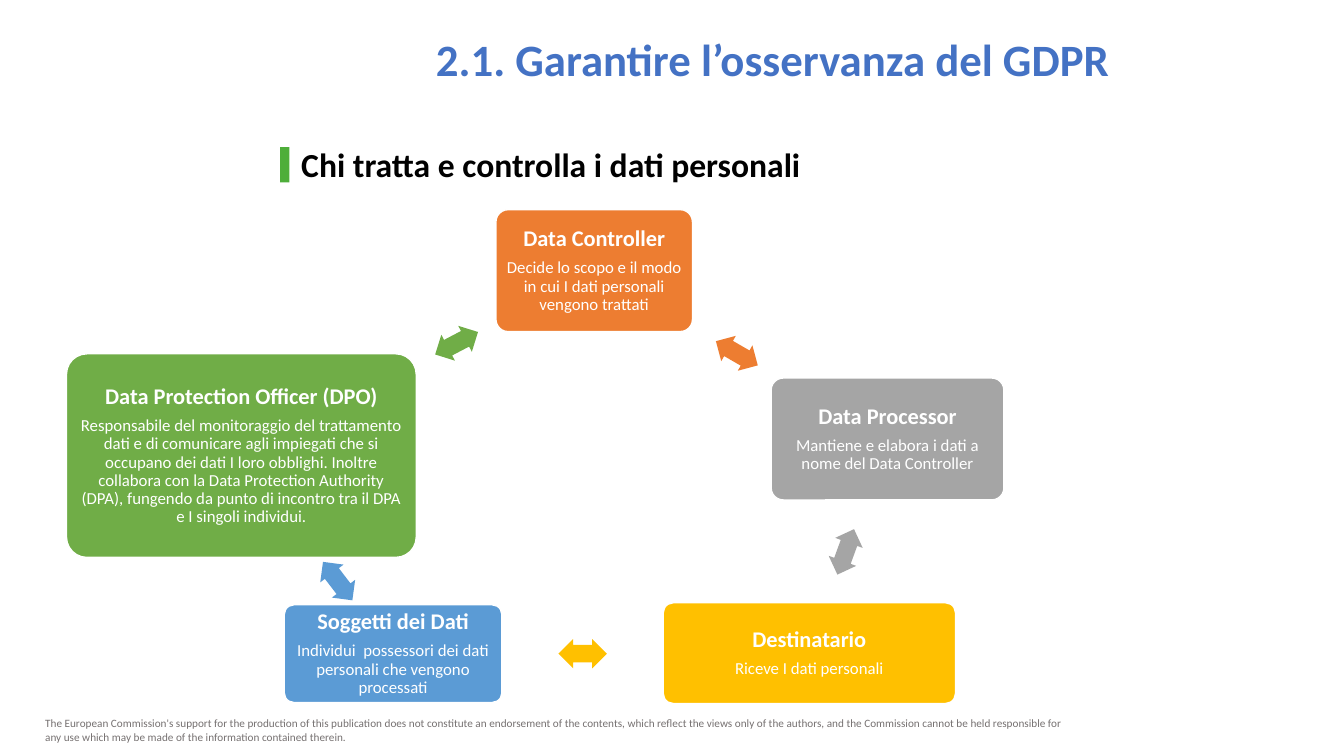
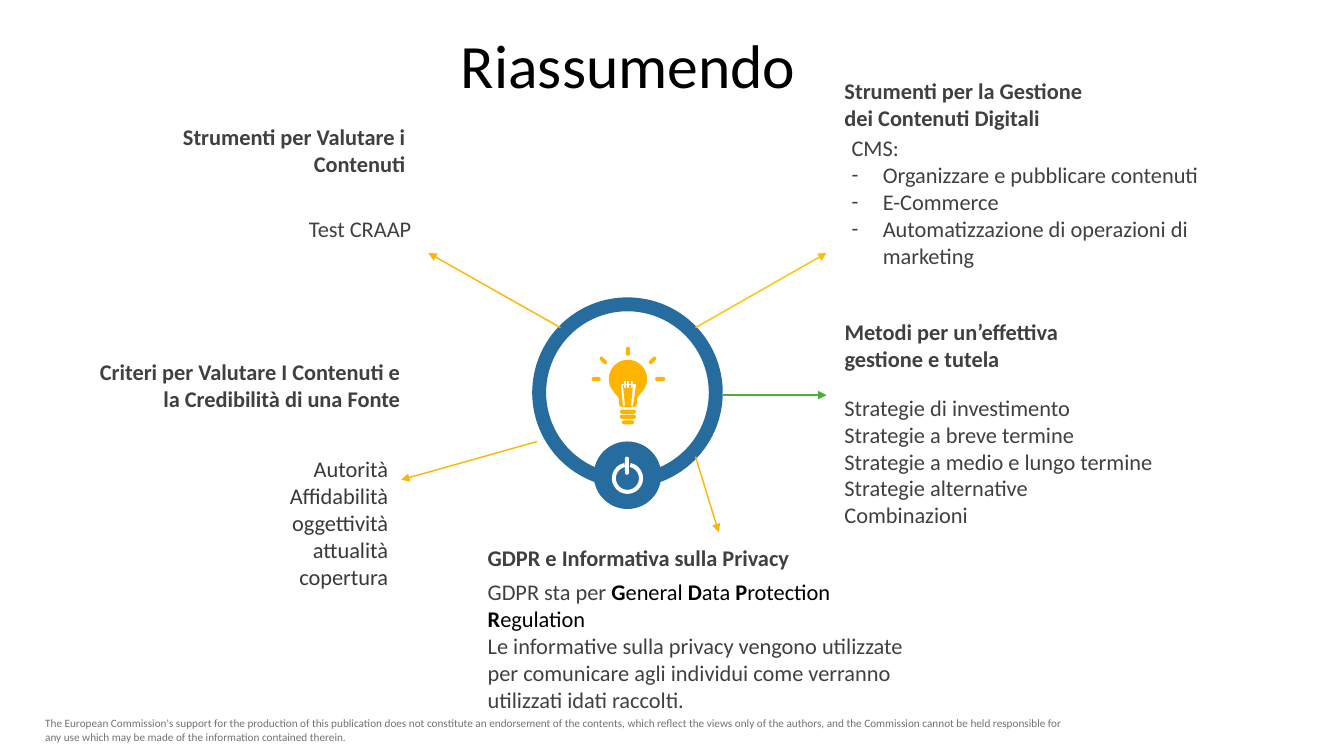
"""Build two Italian training slides: GDPR roles and a closing summary."""
from dataclasses import dataclass
from math import cos, radians, sin

from lxml import etree
from pptx import Presentation
from pptx.dml.color import RGBColor
from pptx.enum.shapes import MSO_CONNECTOR, MSO_SHAPE
from pptx.enum.text import MSO_ANCHOR, MSO_AUTO_SIZE, PP_ALIGN
from pptx.oxml.ns import qn
from pptx.util import Pt

PX = 9144
LEFT, CENTER, RIGHT = PP_ALIGN.LEFT, PP_ALIGN.CENTER, PP_ALIGN.RIGHT
TOP, MIDDLE = MSO_ANCHOR.TOP, MSO_ANCHOR.MIDDLE
RECTANGLE, ROUNDED = MSO_SHAPE.RECTANGLE, MSO_SHAPE.ROUNDED_RECTANGLE
ELLIPSE, DONUT, BLOCK_ARC = MSO_SHAPE.OVAL, MSO_SHAPE.DONUT, MSO_SHAPE.BLOCK_ARC
DOUBLE_ARROW = MSO_SHAPE.LEFT_RIGHT_ARROW
STRAIGHT = MSO_CONNECTOR.STRAIGHT


@dataclass(frozen=True)
class Theme:
    """Colours, font and type sizes of the deck."""
    font: str = "Calibri"
    white: str = "FFFFFF"
    black: str = "000000"
    title_blue: str = "4472C4"
    marker_green: str = "4EAE3A"
    ring_blue: str = "266C9F"
    bulb: str = "FFB500"
    orange: str = "ED7D31"
    gray: str = "A5A5A5"
    gold: str = "FFC000"
    sky: str = "5B9BD5"
    green: str = "70AD47"
    text: str = "404040"
    dark_text: str = "3B3838"
    footer: str = "767171"
    summary_title_size: int = 44
    title_size: int = 32
    subtitle_size: int = 24
    text_size: int = 16
    card_size: int = 12
    footer_size: int = 8


THEME = Theme()


def write(shape, lines, size, color, bold=False, align=LEFT, anchor=MIDDLE, spacing=1.0):
    """Fill a shape with paragraphs; a leading dash makes a bullet, a list makes runs."""
    frame = shape.text_frame
    frame.word_wrap = True
    frame.auto_size = MSO_AUTO_SIZE.NONE
    frame.vertical_anchor = anchor
    for index, line in enumerate(lines):
        paragraph = frame.add_paragraph() if index else frame.paragraphs[0]
        paragraph.alignment = align
        paragraph.line_spacing = spacing
        if isinstance(line, list):
            for text, run_color, run_bold in line:
                run = paragraph.add_run()
                run.text = text
                run.font.bold = run_bold
                run.font.color.rgb = RGBColor.from_string(run_color)
        elif line.startswith("- "):
            paragraph.text = line[2:]
            properties = paragraph._p.get_or_add_pPr()
            properties.set("marL", str(31 * PX))
            properties.set("indent", str(-31 * PX))
            etree.SubElement(properties, qn("a:buFont"), typeface=THEME.font)
            etree.SubElement(properties, qn("a:buChar"), char="-")
        else:
            paragraph.text = line
        font = paragraph.font
        font.name = THEME.font
        font.size = Pt(size)
        font.color.rgb = RGBColor.from_string(color)
        if not isinstance(line, list):
            font.bold = bold


def add_figure(slide, kind, box, color, adjustments=(), rotation=0):
    """Add a flat preset shape without outline."""
    shape = slide.shapes.add_shape(kind, *[value * PX for value in box])
    shape.shadow.inherit = False
    shape.fill.solid()
    shape.fill.fore_color.rgb = RGBColor.from_string(color)
    shape.line.fill.background()
    for index, value in enumerate(adjustments):
        shape.adjustments[index] = value
    shape.rotation = rotation
    return shape


presentation = Presentation()
presentation.slide_width = 12192000
presentation.slide_height = 750 * PX
layout = presentation.slide_layouts[5]

slides = []
for heading, box, size, color, bold, align in [
    ("2.1. Garantire l’osservanza del GDPR", (233, 32, 878, 42),
     THEME.title_size, THEME.title_blue, True, RIGHT),
    ("Riassumendo", (287, 30, 673, 79),
     THEME.summary_title_size, THEME.black, False, CENTER),
]:
    slide = presentation.slides.add_slide(layout)
    title = slide.shapes.title
    title.left, title.top, title.width, title.height = [value * PX for value in box]
    write(title, [heading], size, color, bold, align, TOP, 0.9)
    slides.append(slide)
roles_slide, summary_slide = slides

footer = roles_slide.shapes.add_textbox(35 * PX, 706 * PX, 1046 * PX, 37 * PX)
write(footer, [
    "The European Commission's support for the production of this publication does not "
    "constitute an endorsement of the contents, which reflect the views only of the authors, "
    "and the Commission cannot be held responsible for any use which may be made of the "
    "information contained therein."
], THEME.footer_size, THEME.footer, anchor=TOP)
layout.shapes.element.append(footer.element)

add_figure(roles_slide, RECTANGLE, (278, 146, 9, 35), THEME.marker_green)
subtitle = roles_slide.shapes.add_textbox(289 * PX, 138 * PX, 641 * PX, 50 * PX)
write(subtitle, ["Chi tratta e controlla i dati personali"],
      THEME.subtitle_size, THEME.black, True)

roles = [
    ("Data Controller",
     "Decide lo scopo e il modo in cui I dati personali vengono trattati",
     (492, 208, 195, 121), THEME.orange, (707, 336), 30),
    ("Data Processor",
     "Mantiene e elabora i dati a nome del Data Controller",
     (765, 375, 231, 121), THEME.gray, (815, 533), 110.1),
    ("Destinatario",
     "Riceve I dati personali",
     (658, 598, 290, 100), THEME.gold, (554, 634), 180),
    ("Soggetti dei Dati",
     "Individui  possessori dei dati personali che vengono processati",
     (282, 600, 216, 97), THEME.sky, (311, 562), 232.6),
    ("Data Protection Officer (DPO)",
     "Responsabile del monitoraggio del trattamento dati e di comunicare agli impiegati che "
     "si occupano dei dati I loro obblighi. Inoltre collabora con la Data Protection "
     "Authority (DPA), fungendo da punto di incontro tra il DPA e I singoli individui.",
     (66, 351, 347, 202), THEME.green, (429, 326), 332.3),
]
for role, duty, box, color, arrow_corner, rotation in roles:
    card = add_figure(roles_slide, ROUNDED, box, color, [0.1])
    card.line.color.rgb = RGBColor.from_string(THEME.white)
    card.line.width = Pt(1)
    frame = card.text_frame
    frame.margin_left = frame.margin_right = frame.margin_top = frame.margin_bottom = 7 * PX
    write(card, [role, duty], THEME.card_size, THEME.white, align=CENTER, spacing=0.9)
    role_paragraph = frame.paragraphs[0]
    role_paragraph.font.size = Pt(THEME.text_size)
    role_paragraph.font.bold = True
    role_paragraph.space_after = Pt(5.6)
    add_figure(roles_slide, DOUBLE_ARROW, (*arrow_corner, 48, 29), color, [0.6, 0.5], rotation)

add_figure(summary_slide, DONUT, (528, 295, 189, 189), THEME.ring_blue, [0.073])
add_figure(summary_slide, ELLIPSE, (589, 438, 67, 67), THEME.ring_blue)

glass = [(623 + 19 * cos(radians(angle)), 376 + 19 * sin(radians(angle)))
         for angle in range(135, 406, 10)]
glass += [(632, 395), (632, 400), (631, 403), (628, 404), (618, 404), (615, 403),
          (614, 400), (614, 395)]
filament = [(616, 382), (618, 403), (620, 402), (618, 382), (619, 382), (619, 385),
            (621, 385), (621, 382), (622, 382), (622, 385), (624, 385), (624, 382),
            (626, 382), (626, 385), (628, 385), (628, 382), (626, 403), (628, 403),
            (631, 382), (630, 381), (628, 381), (628, 378), (626, 378), (626, 381),
            (624, 381), (624, 378), (622, 378), (622, 381), (621, 381), (621, 378),
            (619, 378), (619, 381), (617, 381)]
contours = [glass, filament]
for x, y, half_length, rotation in [
    (591.5, 376, 2.5, 0), (598.5, 357.5, 2.5, 45), (623, 348.5, 2.5, 90),
    (647.5, 357.5, 2.5, 135), (655, 376, 3, 0),
    (623, 408.5, 6, 0), (623, 413.5, 6, 0), (623, 419, 4, 0),
]:
    contours.append([
        (x + side * half_length * cos(radians(rotation)) + 2 * cos(radians(rotation + angle)),
         y + side * half_length * sin(radians(rotation)) + 2 * sin(radians(rotation + angle)))
        for side, first in ((1, -90), (-1, 90)) for angle in range(first, first + 181, 30)])

bulb_builder = None
for contour in contours:
    start, *others = [(x * 10, y * 10) for x, y in contour]
    if bulb_builder is None:
        bulb_builder = summary_slide.shapes.build_freeform(*start, PX / 10)
    else:
        bulb_builder.move_to(*start)
    bulb_builder.add_line_segments(others)
bulb = bulb_builder.convert_to_shape()
bulb.shadow.inherit = False
bulb.fill.solid()
bulb.fill.fore_color.rgb = RGBColor.from_string(THEME.bulb)
bulb.line.fill.background()

add_figure(summary_slide, BLOCK_ARC, (607, 459, 31, 31), THEME.white, [169.2, 154.8, 0.13])
add_figure(summary_slide, ROUNDED, (620, 453, 4, 18), THEME.white, [0.5])

for start, end, color in [
    ((717, 392), (820, 392), THEME.marker_green),
    ((556, 325), (425, 251), THEME.bulb),
    ((690, 325), (820, 251), THEME.gold),
    ((690, 453), (713, 528), THEME.bulb),
    ((533, 438), (398, 476), THEME.bulb),
]:
    arrow = summary_slide.shapes.add_connector(
        STRAIGHT, *[value * PX for value in start + end])
    arrow.line.color.rgb = RGBColor.from_string(color)
    arrow.line.width = Pt(1)
    etree.SubElement(arrow.line._get_or_add_ln(), qn("a:tailEnd"), type="triangle")
    etree.SubElement(arrow.element.spPr, qn("a:effectLst"))

topics = [
    ((146, 117, 266, 64), RIGHT, "Strumenti per Valutare i Contenuti",
     (172, 208, 246, 37), THEME.text, ["Test CRAAP"]),
    ((84, 350, 323, 64), RIGHT, "Criteri per Valutare I Contenuti e la Credibilità di una Fonte",
     (74, 446, 321, 145), THEME.dark_text,
     ["Autorità", "Affidabilità", "oggettività", "attualità", "copertura"]),
    ((828, 58, 274, 91), LEFT, "Strumenti per la Gestione dei Contenuti Digitali",
     (835, 114, 376, 172), THEME.text,
     ["CMS:", "- Organizzare e pubblicare contenuti", "- E-Commerce",
      "- Automatizzazione di operazioni di marketing"]),
    ((828, 310, 291, 64), LEFT, "Metodi per un’effettiva gestione e tutela",
     (828, 385, 473, 145), THEME.text,
     ["Strategie di investimento", "Strategie a breve termine",
      "Strategie a medio e lungo termine", "Strategie alternative", "Combinazioni"]),
    ((474, 521, 348, 64), LEFT, "GDPR e Informativa sulla Privacy",
     (474, 568, 457, 145), THEME.text,
     [[("GDPR sta per ", THEME.text, False),
       ("G", THEME.black, True), ("eneral", THEME.black, False),
       (" D", THEME.black, True), ("ata", THEME.black, False),
       (" P", THEME.black, True), ("rotection", THEME.black, False)],
      [("R", THEME.black, True), ("egulation", THEME.black, False)],
      "Le informative sulla privacy vengono utilizzate per comunicare agli individui come "
      "verranno utilizzati idati raccolti."]),
]
for heading_box, align, heading, detail_box, color, details in topics:
    for box, lines, text_color, bold in [(heading_box, [heading], THEME.text, True),
                                         (detail_box, details, color, False)]:
        text_box = summary_slide.shapes.add_textbox(*[value * PX for value in box])
        write(text_box, lines, THEME.text_size, text_color, bold, align)

presentation.save("out.pptx")
